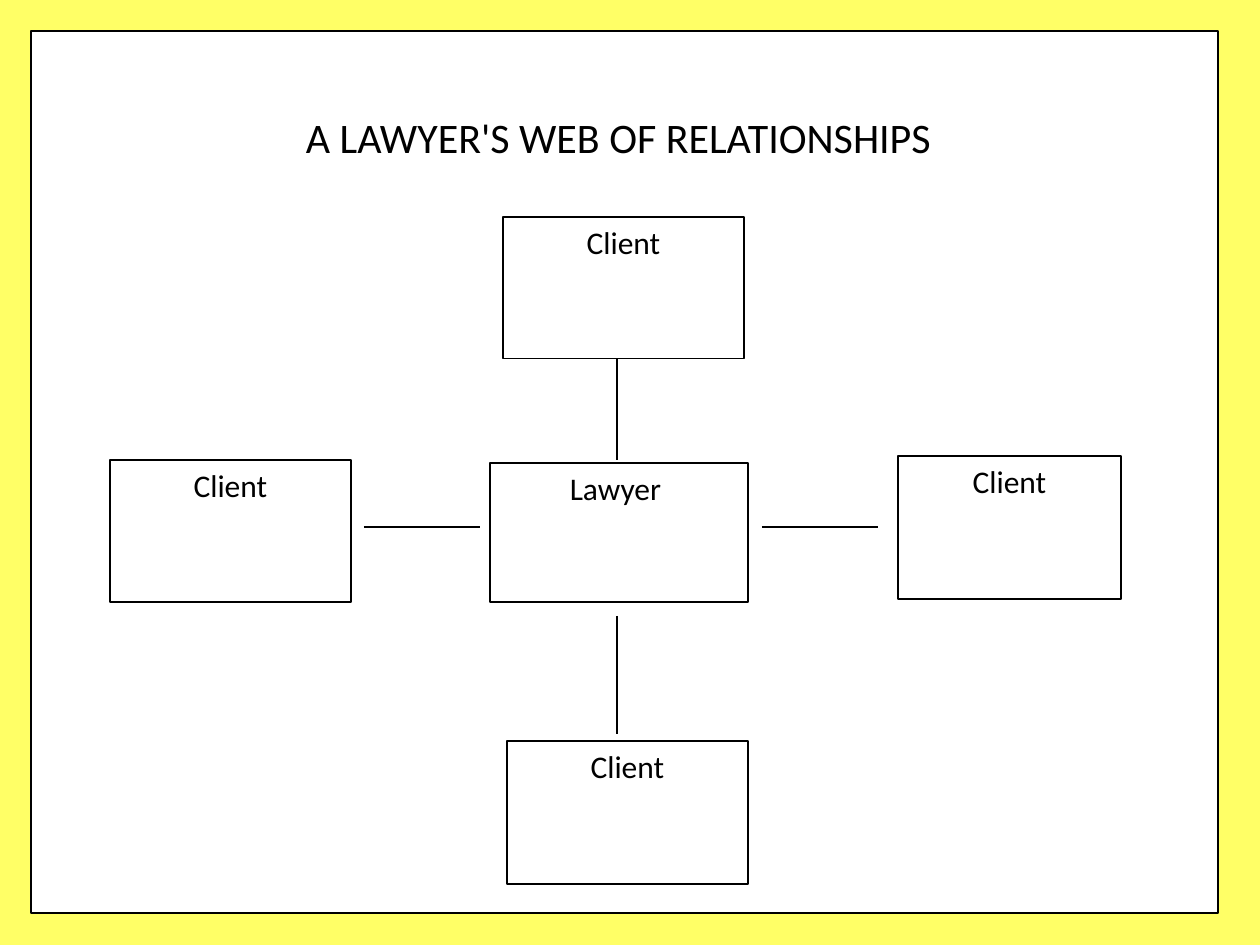
from lxml import etree
from pptx import Presentation
from pptx import util as u
from pptx.dml.color import RGBColor
from pptx.enum import shapes, text
from pptx.oxml.ns import qn

PX = 9144000 // 1260
WIDTH, HEIGHT = 1260, 945
YELLOW, WHITE, BLACK = "FFFF66", "FFFFFF", "000000"

# left, top, width, height
PANEL = (31, 31, 1187, 882)
TITLE = ("A LAWYER'S WEB OF RELATIONSHIPS", (83, 105, 1071, 112))
BOXES = [
    ("Lawyer ", (490, 463, 258, 139)),
    ("Client", (898, 456, 223, 143)),
    ("Client", (110, 460, 241, 142)),
    ("Client", (507, 741, 241, 143)),
    ("Client", (503, 217, 241, 142)),
]
# x1, y1, x2, y2
LINKS = [
    (364, 527, 480, 527),
    (762, 527, 878, 527),
    (617, 339, 617, 460),
    (617, 616, 617, 734),
]


def color(value):
    return RGBColor.from_string(value)


def px(values):
    return [value * PX for value in values]


def write(shape, words, size=18, font="Calibri", ink=BLACK):
    frame = shape.text_frame
    frame.word_wrap = True
    frame.vertical_anchor = text.MSO_ANCHOR.TOP
    paragraph = frame.paragraphs[0]
    paragraph.alignment = text.PP_ALIGN.CENTER
    paragraph.space_after = u.Pt(10)
    run = paragraph.add_run()
    run.text = words
    run.font.size = u.Pt(size)
    run.font.name = font
    run.font.color.rgb = color(ink)


def outline(shape):
    shape.line.color.rgb = color(BLACK)
    shape.line.width = u.Pt(0.75)


def add_box(slide, bounds):
    box = slide.shapes.add_shape(shapes.MSO_SHAPE.RECTANGLE, *px(bounds))
    box.shadow.inherit = False
    box.fill.solid()
    box.fill.fore_color.rgb = color(WHITE)
    outline(box)
    return box


def add_link(slide, ends):
    link = slide.shapes.add_connector(shapes.MSO_CONNECTOR.STRAIGHT, *px(ends))
    outline(link)
    etree.SubElement(link._element.spPr, qn("a:effectLst"))


def main():
    presentation = Presentation()
    presentation.slide_width, presentation.slide_height = px((WIDTH, HEIGHT))
    slide = presentation.slides.add_slide(presentation.slide_layouts[6])
    slide.background.fill.solid()
    slide.background.fill.fore_color.rgb = color(YELLOW)

    add_box(slide, PANEL)
    words, bounds = TITLE
    write(slide.shapes.add_textbox(*px(bounds)), words, size=24)
    for ends in LINKS:
        add_link(slide, ends)
    for words, bounds in BOXES:
        write(add_box(slide, bounds), words)

    presentation.save("out.pptx")


if __name__ == "__main__":
    main()
